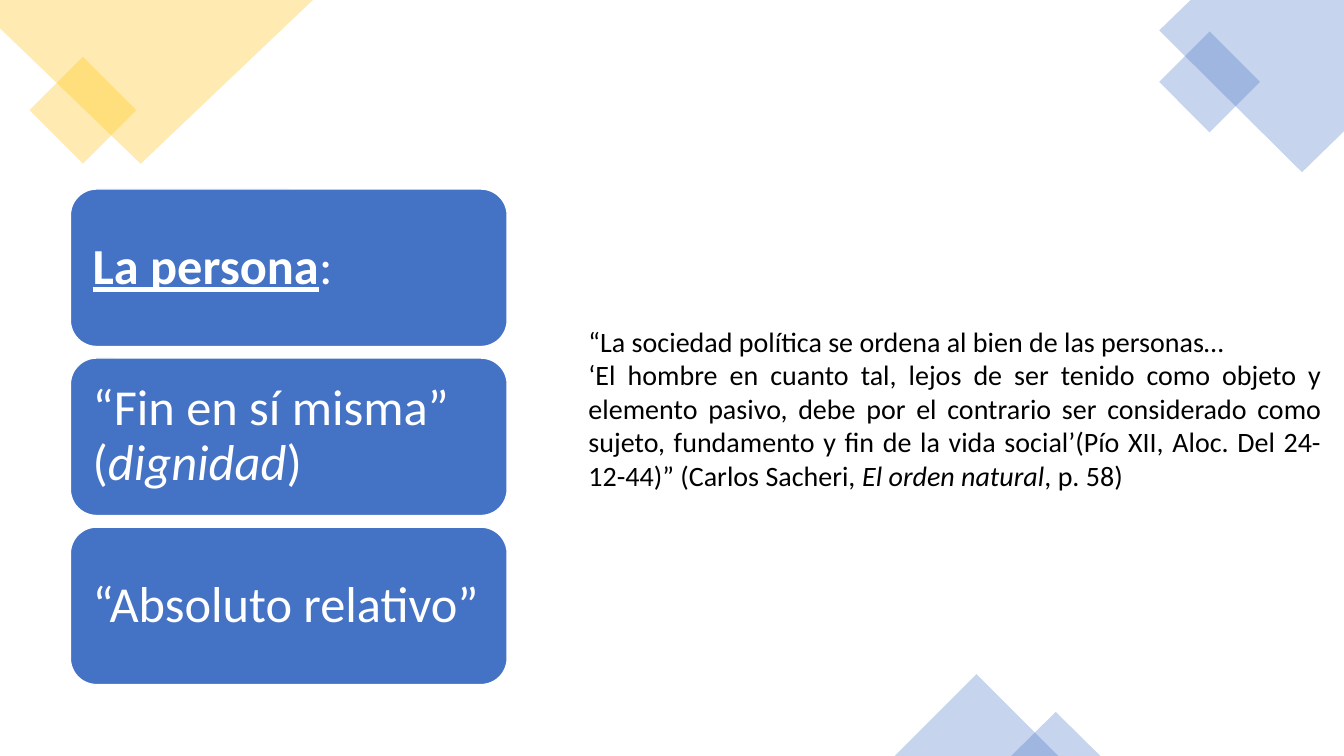
"""Build the slide about the person as an end in itself."""
from dataclasses import dataclass

from lxml import etree
from pptx import Presentation
from pptx.dml.color import RGBColor
from pptx.enum.shapes import MSO_SHAPE
from pptx.enum.text import MSO_ANCHOR, MSO_AUTO_SIZE, PP_ALIGN
from pptx.oxml.ns import qn
from pptx.shapes.autoshape import Shape
from pptx.slide import Slide
from pptx.text.text import _Paragraph
from pptx.util import Pt

PX = 9525
FONT = "Calibri"
COLORS = {"gold": "FFC000", "blue": "4472C4", "white": "FFFFFF", "black": "000000"}
RECTANGLE = MSO_SHAPE.RECTANGLE
TRIANGLE = MSO_SHAPE.ISOSCELES_TRIANGLE
ROUNDED = MSO_SHAPE.ROUNDED_RECTANGLE
MIDDLE = MSO_ANCHOR.MIDDLE
GROW = MSO_AUTO_SIZE.SHAPE_TO_FIT_TEXT
LEFT = PP_ALIGN.LEFT
JUSTIFY = PP_ALIGN.JUSTIFY


@dataclass(frozen=True)
class Ornament:
    """A translucent preset shape."""
    kind: MSO_SHAPE
    left: int
    top: int
    width: int
    height: int
    color: str
    rotation: int = 0


@dataclass(frozen=True)
class Corner:
    """A translucent polygon cut off by the slide edge."""
    points: tuple[tuple[int, int], ...]
    color: str


@dataclass(frozen=True)
class Phrase:
    """A piece of text with one style."""
    text: str
    heading: bool = False
    italic: bool = False


ORNAMENTS = (
    Ornament(RECTANGLE, 43, 69, 72, 72, "gold", 45),
    Ornament(RECTANGLE, 1118, 44, 68, 68, "blue", 45),
    Ornament(TRIANGLE, 852, 642, 156, 78, "blue"),
    Ornament(TRIANGLE, 963, 678, 85, 42, "blue"),
)
CORNERS = (
    Corner(((0, 0), (298, 0), (134, 156), (0, 27)), "gold"),
    Corner(((1134, 0), (1280, 0), (1280, 125), (1240, 164), (1104, 29)), "blue"),
)
CARDS = (
    (Phrase("La persona", heading=True), Phrase(":")),
    (Phrase("“Fin en sí misma” ("), Phrase("dignidad", italic=True), Phrase(")")),
    (Phrase("“Absoluto relativo”"),),
)
CARD_LEFT, CARD_TOP, CARD_WIDTH, CARD_HEIGHT = 67, 180, 416, 150
CARD_PITCH = 161
CARD_INSET = 14
QUOTE = (
    (Phrase("“La sociedad política se ordena al bien de las personas…"),),
    (
        Phrase(
            "‘El hombre en cuanto tal, lejos de ser tenido como objeto y elemento "
            "pasivo, debe por el contrario ser considerado como sujeto, fundamento "
            "y fin de la vida social’(Pío XII, Aloc. Del 24-12-44)” (Carlos Sacheri, "
        ),
        Phrase("El orden natural", italic=True),
        Phrase(", p. 58)"),
    ),
)


def rgb(name: str) -> RGBColor:
    """Return the named colour."""
    return RGBColor.from_string(COLORS[name])


def make_translucent(shape: Shape, color: str) -> None:
    """Fill a shape at 30 % opacity without outline or shadow."""
    shape.shadow.inherit = False
    shape.fill.solid()
    shape.fill.fore_color.rgb = rgb(color)
    shape.line.fill.background()
    tint = shape._element.spPr.find(f"{qn('a:solidFill')}/{qn('a:srgbClr')}")
    etree.SubElement(tint, qn("a:alpha"), val="30000")


def add_ornament(slide: Slide, ornament: Ornament) -> None:
    """Draw one preset ornament."""
    shape = slide.shapes.add_shape(
        ornament.kind, ornament.left * PX, ornament.top * PX,
        ornament.width * PX, ornament.height * PX,
    )
    shape.rotation = ornament.rotation
    make_translucent(shape, ornament.color)


def add_corner(slide: Slide, corner: Corner) -> None:
    """Draw one corner polygon."""
    start, *rest = corner.points
    outline = slide.shapes.build_freeform(*start, scale=PX)
    outline.add_line_segments(rest, close=True)
    make_translucent(outline.convert_to_shape(), corner.color)


def write_phrases(
    paragraph: _Paragraph, phrases: tuple[Phrase, ...], size: int, color: str
) -> None:
    """Write styled phrases into a paragraph."""
    for phrase in phrases:
        run = paragraph.add_run()
        run.text = phrase.text
        run.font.name = FONT
        run.font.size = Pt(size)
        run.font.color.rgb = rgb(color)
        run.font.bold = phrase.heading
        run.font.underline = phrase.heading
        run.font.italic = phrase.italic


def add_card(slide: Slide, row: int, phrases: tuple[Phrase, ...]) -> None:
    """Draw one rounded card in the left column."""
    card = slide.shapes.add_shape(
        ROUNDED, CARD_LEFT * PX, (CARD_TOP + row * CARD_PITCH) * PX,
        CARD_WIDTH * PX, CARD_HEIGHT * PX,
    )
    card.shadow.inherit = False
    card.fill.solid()
    card.fill.fore_color.rgb = rgb("blue")
    card.line.color.rgb = rgb("white")
    card.line.width = Pt(1)
    frame = card.text_frame
    frame.word_wrap = True
    frame.vertical_anchor = MIDDLE
    frame.margin_left = frame.margin_right = CARD_INSET * PX
    frame.margin_top = frame.margin_bottom = CARD_INSET * PX
    paragraph = frame.paragraphs[0]
    paragraph.alignment = LEFT
    paragraph.line_spacing = 0.9
    write_phrases(paragraph, phrases, 36, "white")


def add_quote(slide: Slide) -> None:
    """Write the justified quotation on the right."""
    quote = slide.shapes.add_textbox(551 * PX, 304 * PX, 717 * PX, 171 * PX)
    frame = quote.text_frame
    frame.word_wrap = True
    frame.auto_size = GROW
    for index, phrases in enumerate(QUOTE):
        paragraph = frame.add_paragraph() if index else frame.paragraphs[0]
        paragraph.alignment = JUSTIFY
        write_phrases(paragraph, phrases, 20, "black")


def main() -> None:
    """Assemble and save the slide."""
    deck = Presentation()
    deck.slide_width, deck.slide_height = 1280 * PX, 720 * PX
    slide = deck.slides.add_slide(deck.slide_layouts[6])
    for corner in CORNERS:
        add_corner(slide, corner)
    for ornament in ORNAMENTS:
        add_ornament(slide, ornament)
    add_quote(slide)
    for row, phrases in enumerate(CARDS):
        add_card(slide, row, phrases)
    deck.save("out.pptx")


if __name__ == "__main__":
    main()
